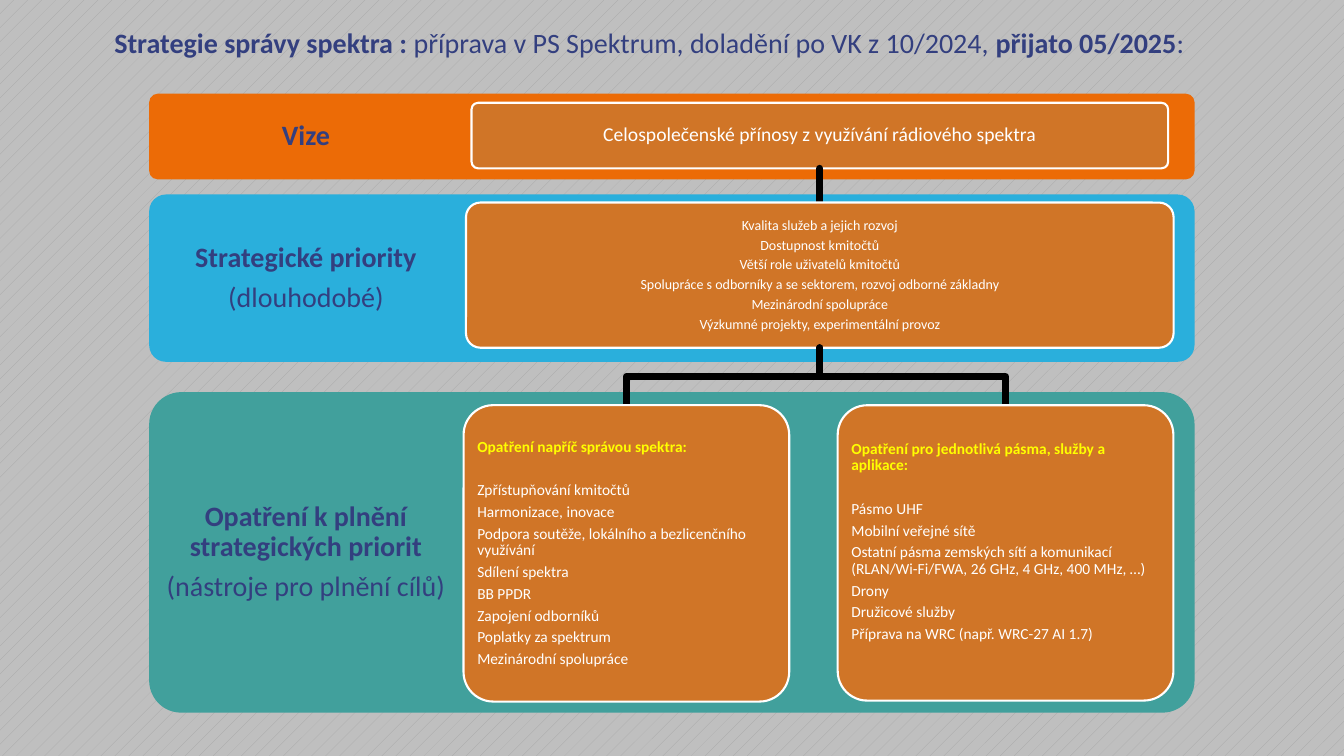
import pptx
import pptx.dml.color
import pptx.enum.dml
import pptx.enum.shapes
import pptx.enum.text
import pptx.oxml.ns
import pptx.util

RGBColor = pptx.dml.color.RGBColor
ALIGN = pptx.enum.text.PP_ALIGN
ANCHOR = pptx.enum.text.MSO_ANCHOR
ROUNDED = pptx.enum.shapes.MSO_SHAPE.ROUNDED_RECTANGLE

GREY = RGBColor(0xBF, 0xBF, 0xBF)
DARK_GREY = RGBColor(0xA6, 0xA6, 0xA6)
NAVY = RGBColor(0x33, 0x3F, 0x7F)
ORANGE = RGBColor(0xEC, 0x6B, 0x06)
BLUE = RGBColor(0x2A, 0xAF, 0xDC)
TEAL = RGBColor(0x41, 0xA0, 0x9C)
BROWN = RGBColor(0xD0, 0x75, 0x27)
WHITE = RGBColor(0xFF, 0xFF, 0xFF)
YELLOW = RGBColor(0xFF, 0xFF, 0x00)
BLACK = RGBColor(0x00, 0x00, 0x00)

# Shares of the slide's width, in percent
BAND_LEFT, BAND_WIDTH, LABEL_WIDTH = 11.1, 77.78, 23.33
MAIN_CENTRE, LEFT_CENTRE, RIGHT_CENTRE = 61, 46.61, 74.82

TITLE = [
    ("Strategie správy spektra : ", True),
    ("příprava v PS Spektrum, doladění po VK z 10/2024, ", False),
    ("přijato 05/2025", True),
    (":", False),
]

# Top and height in percent of the slide's height, colour, label lines
BANDS = [
    (12.4, 11.33, ORANGE, ["Vize"]),
    (25.73, 22.13, BLUE, ["Strategické priority", "(dlouhodobé)"]),
    (51.87, 42.4, TEAL, ["Opatření k plnění strategických priorit",
                         "(nástroje pro plnění cílů)"]),
]

VISION = ["Celospolečenské přínosy z využívání rádiového spektra"]
PRIORITIES = [
    "Kvalita služeb a jejich rozvoj",
    "Dostupnost kmitočtů",
    "Větší role uživatelů kmitočtů",
    "Spolupráce s odborníky a se sektorem, rozvoj odborné základny",
    "Mezinárodní spolupráce",
    "Výzkumné projekty, experimentální provoz",
]
GENERAL_MEASURES = [
    "Opatření napříč správou spektra:",
    "Zpřístupňování kmitočtů",
    "Harmonizace, inovace",
    "Podpora soutěže, lokálního a bezlicenčního využívání",
    "Sdílení spektra",
    "BB PPDR",
    "Zapojení odborníků",
    "Poplatky za spektrum",
    "Mezinárodní spolupráce",
]
BAND_MEASURES = [
    "Opatření pro jednotlivá pásma, služby a aplikace:",
    "Pásmo UHF",
    "Mobilní veřejné sítě",
    "Ostatní pásma zemských sítí a komunikací (RLAN/Wi-Fi/FWA, 26 GHz, 4 GHz, 400 MHz, …)",
    "Drony",
    "Družicové služby",
    "Příprava na WRC (např. WRC-27 AI 1.7)",
]


class StrategySlide:
    """Draws on one slide; places and sizes are percentages of the slide."""

    font_name = "Calibri"
    line_spacing = 0.9
    gap_share = 0.33
    corner = 0.1

    def __init__(self, presentation):
        self.width = presentation.slide_width
        self.height = presentation.slide_height
        self.slide = presentation.slides.add_slide(presentation.slide_layouts[5])
        self.shapes = self.slide.shapes

    def frame(self, left, top, width, height):
        return (int(self.width * left / 100), int(self.height * top / 100),
                int(self.width * width / 100), int(self.height * height / 100))

    def style_run(self, run, size, color, bold):
        run.font.name = self.font_name
        run.font.size = pptx.util.Pt(size)
        run.font.color.rgb = color
        run.font.bold = bold

    def background(self, foreground, base):
        fill = self.slide.background.fill
        fill.patterned()
        fill.pattern = pptx.enum.dml.MSO_PATTERN.PERCENT_5
        fill.fore_color.rgb = foreground
        fill.back_color.rgb = base

    def title(self, parts, left, top, width, height, size=20):
        title = self.shapes.title
        title.left, title.top, title.width, title.height = self.frame(left, top, width, height)
        text_frame = title.text_frame
        text_frame.word_wrap = True
        text_frame.auto_size = pptx.enum.text.MSO_AUTO_SIZE.NONE
        text_frame.vertical_anchor = ANCHOR.MIDDLE
        paragraph = text_frame.paragraphs[0]
        paragraph.alignment = ALIGN.CENTER
        for text, bold in parts:
            run = paragraph.add_run()
            run.text = text
            self.style_run(run, size, NAVY, bold)

    def fill_text(self, shape, lines, size, color, inset, alignment=ALIGN.CENTER,
                  heading_color=None, heading_gap=None, extra_bottom=0):
        """Fill a shape with paragraphs; a heading colour makes the first one bold."""
        text_frame = shape.text_frame
        text_frame.text = "\n".join(lines)
        text_frame.word_wrap = True
        text_frame.vertical_anchor = ANCHOR.MIDDLE
        text_frame.margin_left = text_frame.margin_right = pptx.util.Inches(inset)
        text_frame.margin_top = pptx.util.Inches(inset)
        text_frame.margin_bottom = pptx.util.Inches(inset + extra_bottom)
        for index, paragraph in enumerate(text_frame.paragraphs):
            is_heading = index == 0 and heading_color is not None
            paragraph.alignment = alignment
            paragraph.line_spacing = self.line_spacing
            gap = heading_gap if is_heading and heading_gap else size * self.gap_share
            paragraph.space_after = pptx.util.Pt(gap)
            for run in paragraph.runs:
                self.style_run(run, size, heading_color if is_heading else color, is_heading)

    def rounded(self, left, top, width, height, color):
        shape = self.shapes.add_shape(ROUNDED, *self.frame(left, top, width, height))
        shape.adjustments[0] = self.corner
        shape.shadow.inherit = False
        shape.fill.solid()
        shape.fill.fore_color.rgb = color
        shape.line.fill.background()
        return shape

    def band(self, top, height, color, label):
        self.rounded(BAND_LEFT, top, BAND_WIDTH, height, color)
        text_box = self.shapes.add_textbox(*self.frame(BAND_LEFT, top, LABEL_WIDTH, height))
        self.fill_text(text_box, label, 20, NAVY, 0.16, heading_color=NAVY)

    def box(self, centre, top, width, height, lines, size, inset, **text_options):
        box = self.rounded(centre - width / 2, top, width, height, BROWN)
        box.line.color.rgb = WHITE
        box.line.width = pptx.util.Pt(1.5)
        self.fill_text(box, lines, size, WHITE, inset, **text_options)
        return box

    def finish_link(self, link, lower):
        """Style a link and place it just behind its lower box."""
        link.line.color.rgb = BLACK
        link.line.width = pptx.util.Pt(5)
        link.line._get_or_add_ln().set("cap", "rnd")
        lower._element.addprevious(link._element)

    def straight_link(self, upper, lower):
        link = self.shapes.add_connector(
            pptx.enum.shapes.MSO_CONNECTOR.STRAIGHT, 0, 0, 0, 0)
        link.begin_connect(upper, 2)
        link.end_connect(lower, 0)
        self.finish_link(link, lower)
        properties = link._element.spPr
        properties.append(properties.makeelement(pptx.oxml.ns.qn("a:effectLst"), {}))

    def elbow_link(self, upper, lower):
        start_x, end_x = (box.left + box.width // 2 for box in (upper, lower))
        start_y, end_y = upper.top + upper.height, lower.top
        middle_y = (start_y + end_y) // 2
        builder = self.shapes.build_freeform(start_x, start_y)
        builder.add_line_segments(
            [(start_x, middle_y), (end_x, middle_y), (end_x, end_y)], close=False)
        link = builder.convert_to_shape()
        link.shadow.inherit = False
        link.fill.background()
        self.finish_link(link, lower)


def main():
    presentation = pptx.Presentation()
    presentation.slide_width = pptx.util.Inches(13.33)
    presentation.slide_height = pptx.util.Inches(7.5)

    strategy = StrategySlide(presentation)
    strategy.background(DARK_GREY, GREY)
    strategy.title(TITLE, 2.03, 2.67, 92.55, 5.87)
    for band in BANDS:
        strategy.band(*band)

    vision = strategy.box(MAIN_CENTRE, 13.6, 51.83, 8.67, VISION, 14, 0.06)
    priorities = strategy.box(MAIN_CENTRE, 26.8, 52.65, 19.2, PRIORITIES, 10, 0.04)
    list_style = {"alignment": ALIGN.LEFT, "heading_color": YELLOW, "heading_gap": 19.3}
    general = strategy.box(LEFT_CENTRE, 53.6, 24.23, 39.2, GENERAL_MEASURES, 11, 0.05,
                           **list_style)
    by_band = strategy.box(RIGHT_CENTRE, 53.6, 24.98, 39.07, BAND_MEASURES, 11, 0.05,
                           extra_bottom=0.22, **list_style)

    strategy.straight_link(vision, priorities)
    for measures in (general, by_band):
        strategy.elbow_link(priorities, measures)

    presentation.save("out.pptx")


if __name__ == "__main__":
    main()
